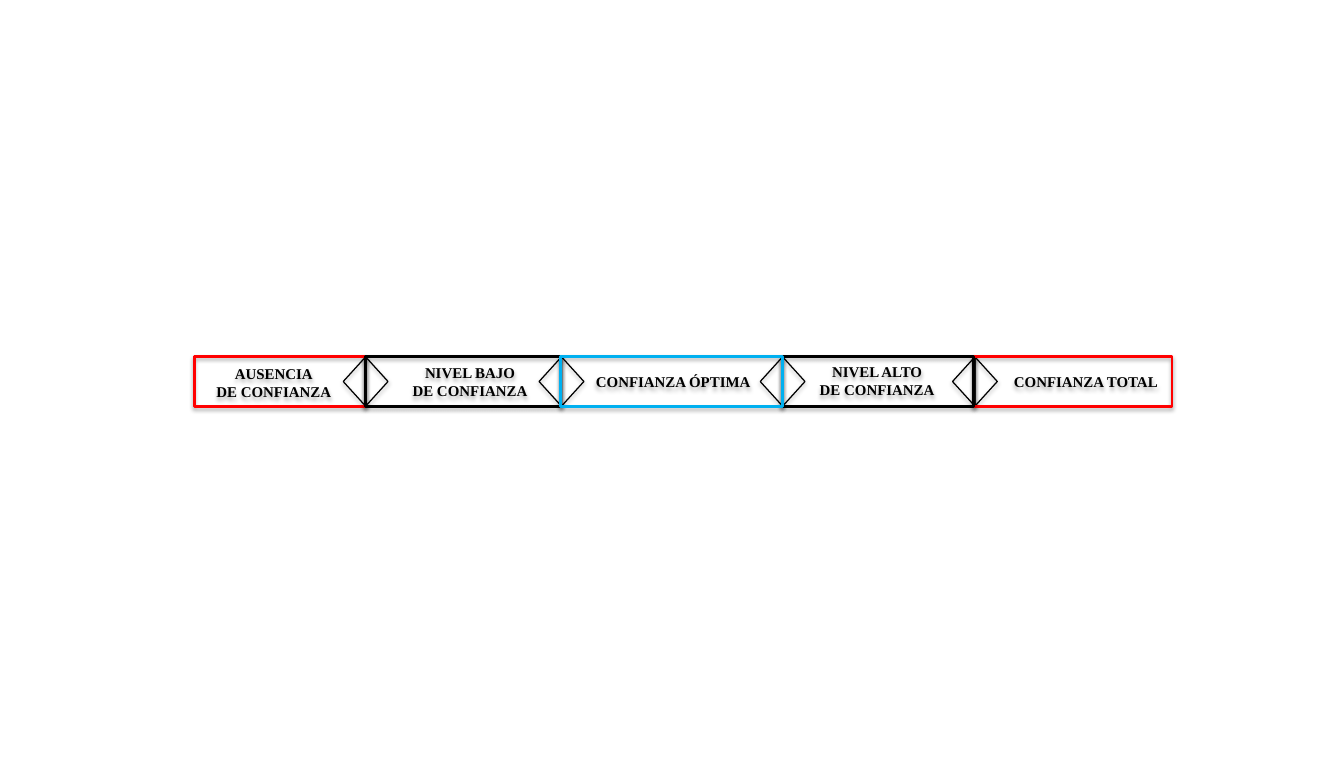
from lxml.etree import SubElement
from pptx import Presentation
from pptx.dml.color import RGBColor
from pptx.enum.shapes import MSO_SHAPE
from pptx.enum.text import MSO_AUTO_SIZE, PP_ALIGN
from pptx.oxml.ns import qn
from pptx.util import Pt

BLACK = RGBColor(0, 0, 0)
RED = RGBColor(255, 0, 0)
BLUE = RGBColor(0, 176, 240)

# Scale of trust: left edge, width, colour of each level
TOP, HIGH, TIP = 286.6, 39.6, 18
LEVELS = [
    (782.6, 159.2, RED),
    (156.2, 137.6, RED),
    (293.8, 156.9, BLACK),
    (628.6, 154, BLACK),
    (450.7, 177.9, BLUE),
]
JOINTS = [293.8, 451.2, 628.9, 783.4]
# Labels: left, top, width, height, lines
LABELS = [
    (164.2, 289.4, 111.6, 36, "AUSENCIA\nDE CONFIANZA"),
    (304.6, 288.7, 146.2, 36, "NIVEL BAJO\nDE CONFIANZA"),
    (469.4, 295.9, 143.3, 21.6, "CONFIANZA ÓPTIMA"),
    (643.7, 288, 122.4, 36, "NIVEL ALTO\nDE CONFIANZA"),
    (803.5, 295.9, 138.2, 21.6, "CONFIANZA TOTAL"),
]


class Deck:
    font = "Times New Roman"
    size = 12

    def __init__(self, slide):
        self.slide = slide

    def shade(self, shape):
        """Give a shape a soft shadow below it."""
        shape.shadow.inherit = False
        effects = shape._element.spPr.find(qn("a:effectLst"))
        outer = SubElement(effects, qn("a:outerShdw"), blurRad=str(Pt(3.5)),
                           dist=str(Pt(2.2)), dir="5400000", rotWithShape="0")
        color = SubElement(outer, qn("a:srgbClr"), val=str(BLACK))
        SubElement(color, qn("a:alpha"), val="32000")

    def shape(self, kind, left, top, width, height, color, line, turn=0):
        shape = self.slide.shapes.add_shape(
            kind, Pt(left), Pt(top), Pt(width), Pt(height))
        shape.rotation = turn
        shape.fill.background()
        shape.line.color.rgb = color
        shape.line.width = Pt(line)
        self.shade(shape)

    def level(self, left, width, color):
        self.shape(MSO_SHAPE.RECTANGLE, left, TOP, width, HIGH, color, 2.25)

    def joint(self, x):
        """Two triangles back to back, pointing away from x."""
        for side, turn in ((1, 90), (-1, 270)):
            mid = x + side * TIP / 2
            self.shape(MSO_SHAPE.ISOSCELES_TRIANGLE, mid - HIGH / 2,
                       TOP + (HIGH - TIP) / 2, HIGH, TIP, BLACK, 1, turn)

    def label(self, left, top, width, height, text):
        box = self.slide.shapes.add_textbox(
            Pt(left), Pt(top), Pt(width), Pt(height))
        self.shade(box)
        frame = box.text_frame
        frame.word_wrap = True
        frame.auto_size = MSO_AUTO_SIZE.SHAPE_TO_FIT_TEXT
        frame.text = text
        for para in frame.paragraphs:
            para.alignment = PP_ALIGN.CENTER
            for run in para.runs:
                run.font.name = self.font
                run.font.size = Pt(self.size)
                run.font.bold = True
                run.font.color.rgb = BLACK


def main():
    prs = Presentation()
    prs.slide_width, prs.slide_height = Pt(1080), Pt(612)
    deck = Deck(prs.slides.add_slide(prs.slide_layouts[6]))

    # Arrow tips go below the frames
    for x in JOINTS:
        deck.joint(x)
    for level in LEVELS:
        deck.level(*level)
    for label in LABELS:
        deck.label(*label)

    prs.save("out.pptx")


if __name__ == "__main__":
    main()
